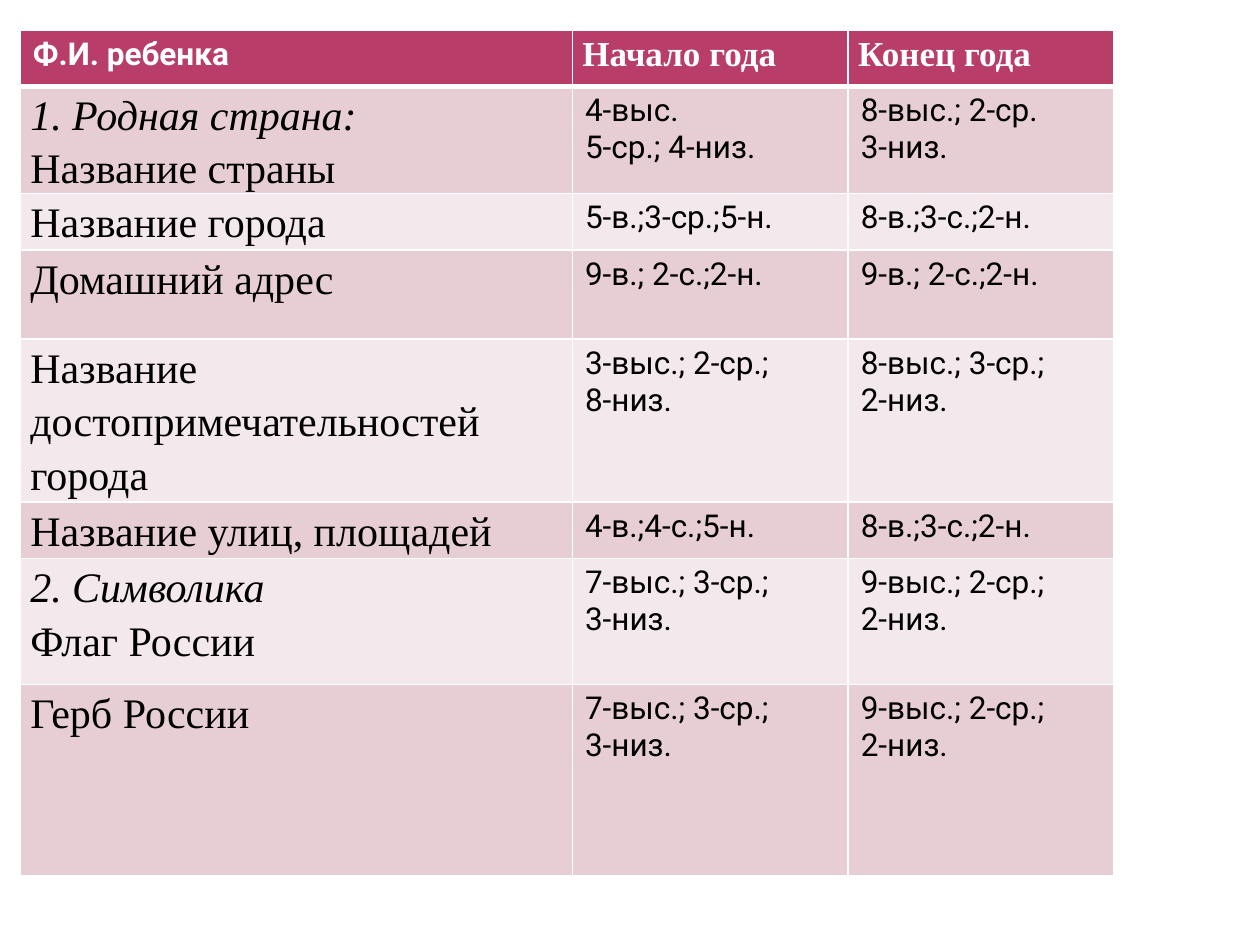
from lxml import etree
from pptx import Presentation
from pptx.dml.color import RGBColor
from pptx.oxml.ns import qn
from pptx.util import Cm, Pt

WHITE = RGBColor(0xFF, 0xFF, 0xFF)
BLACK = RGBColor(0, 0, 0)
CRIMSON = RGBColor(0xB8, 0x3D, 0x68)
PINK = RGBColor(0xE6, 0xCE, 0xD4)
PALE_PINK = RGBColor(0xF3, 0xE8, 0xEB)
SANS = "Roboto"
SERIF = "Times New Roman"
BLANK_LAYOUT = 6

COLUMN_WIDTHS = [11.13, 5.56, 5.36]
HEADINGS = ["Ф.И. ребенка", "Начало года", "Конец года"]
HEADING_HEIGHT = 1.14
# Height, section heading, topic, scores at the start and at the end of the year
TOPICS = [
    (2.16, "1. Родная страна:", "Название страны",
     ["4-выс.", "5-ср.; 4-низ."], ["8-выс.; 2-ср.", "3-низ."]),
    (1.14, None, "Название города", ["5-в.;3-ср.;5-н."], ["8-в.;3-с.;2-н."]),
    (1.8, None, "Домашний адрес", ["9-в.; 2-с.;2-н."], ["9-в.; 2-с.;2-н."]),
    (3.28, None, "Название достопримечательностей города",
     ["3-выс.; 2-ср.;", "8-низ."], ["8-выс.; 3-ср.;", "2-низ."]),
    (1.14, None, "Название улиц, площадей", ["4-в.;4-с.;5-н."], ["8-в.;3-с.;2-н."]),
    (2.54, "2. Символика", "Флаг России",
     ["7-выс.; 3-ср.;", "3-низ."], ["9-выс.; 2-ср.;", "2-низ."]),
    (3.86, None, "Герб России",
     ["7-выс.; 3-ср.;", "3-низ."], ["9-выс.; 2-ср.;", "2-низ."]),
]

SCORE_FONT = {"name": SANS, "size": Pt(18), "bold": False}
TOPIC_FONT = {"name": SERIF, "size": Pt(24), "bold": False, "italic": False}
SECTION_FONT = TOPIC_FONT | {"italic": True}
CHILD_FONT = {"name": SANS, "size": Pt(18), "bold": True}
PERIOD_FONT = {"name": SERIF, "size": Pt(20), "bold": True}
TIGHT_MARGINS = {"margin_left": Cm(0.2), "margin_right": Cm(0.2),
                 "margin_top": 0, "margin_bottom": 0}
LOOSE_LINES = {"line_spacing": 1.15, "space_after": Pt(7.5)}


def apply(target, values):
    for attribute, value in values.items():
        setattr(target, attribute, value)


def add_text(paragraph, text, font, color):
    run = paragraph.add_run()
    run.text = text
    apply(run.font, font)
    run.font.color.rgb = color


def style_cell(cell, color, top=1, bottom=1):
    """Draw white borders of the given widths in points, then fill the cell."""
    properties = cell._tc.get_or_add_tcPr()
    for side, width in (("L", 1), ("R", 1), ("T", top), ("B", bottom)):
        border = etree.SubElement(properties, qn(f"a:ln{side}"), w=str(Pt(width)))
        fill = etree.SubElement(border, qn("a:solidFill"))
        etree.SubElement(fill, qn("a:srgbClr"), val=str(WHITE))
    cell.fill.solid()
    cell.fill.fore_color.rgb = color


def loose_paragraph(cell):
    """Tighten the cell's margins and return its widely spaced paragraph."""
    apply(cell, TIGHT_MARGINS)
    paragraph = cell.text_frame.paragraphs[0]
    apply(paragraph, LOOSE_LINES)
    return paragraph


def fill_headings(cells):
    child, *periods = cells
    add_text(child.text_frame.paragraphs[0], HEADINGS[0], CHILD_FONT, WHITE)
    for period, heading in zip(periods, HEADINGS[1:]):
        add_text(loose_paragraph(period), heading, PERIOD_FONT, WHITE)
    for cell in cells:
        style_cell(cell, CRIMSON, bottom=3)


def fill_topic(cells, section, topic, *scores):
    paragraph = loose_paragraph(cells[0])
    if section:
        add_text(paragraph, section, SECTION_FONT, BLACK)
        paragraph.add_line_break()
    add_text(paragraph, topic, TOPIC_FONT, BLACK)
    for cell, lines in zip(cells[1:], scores):
        frame = cell.text_frame
        for index, line in enumerate(lines):
            paragraph = frame.add_paragraph() if index else frame.paragraphs[0]
            add_text(paragraph, line, SCORE_FONT, BLACK)


def add_results_table(slide, left, top):
    heights = [HEADING_HEIGHT] + [topic[0] for topic in TOPICS]
    table = slide.shapes.add_table(
        len(heights), len(COLUMN_WIDTHS), Cm(left), Cm(top),
        Cm(sum(COLUMN_WIDTHS)), Cm(sum(heights))).table
    for column, width in zip(table.columns, COLUMN_WIDTHS):
        column.width = Cm(width)
    for row, height in zip(table.rows, heights):
        row.height = Cm(height)

    heading_row, *topic_rows = table.rows
    fill_headings(list(heading_row.cells))
    for index, (row, topic) in enumerate(zip(topic_rows, TOPICS)):
        cells = list(row.cells)
        fill_topic(cells, *topic[1:])
        for cell in cells:
            style_cell(cell, PALE_PINK if index % 2 else PINK,
                       top=1 if index else 3)


def main():
    presentation = Presentation()
    presentation.slide_width = Cm(25.4)
    presentation.slide_height = Cm(19.05)
    slide = presentation.slides.add_slide(presentation.slide_layouts[BLANK_LAYOUT])
    add_results_table(slide, left=0.41, top=0.6)
    presentation.save("out.pptx")


if __name__ == "__main__":
    main()
